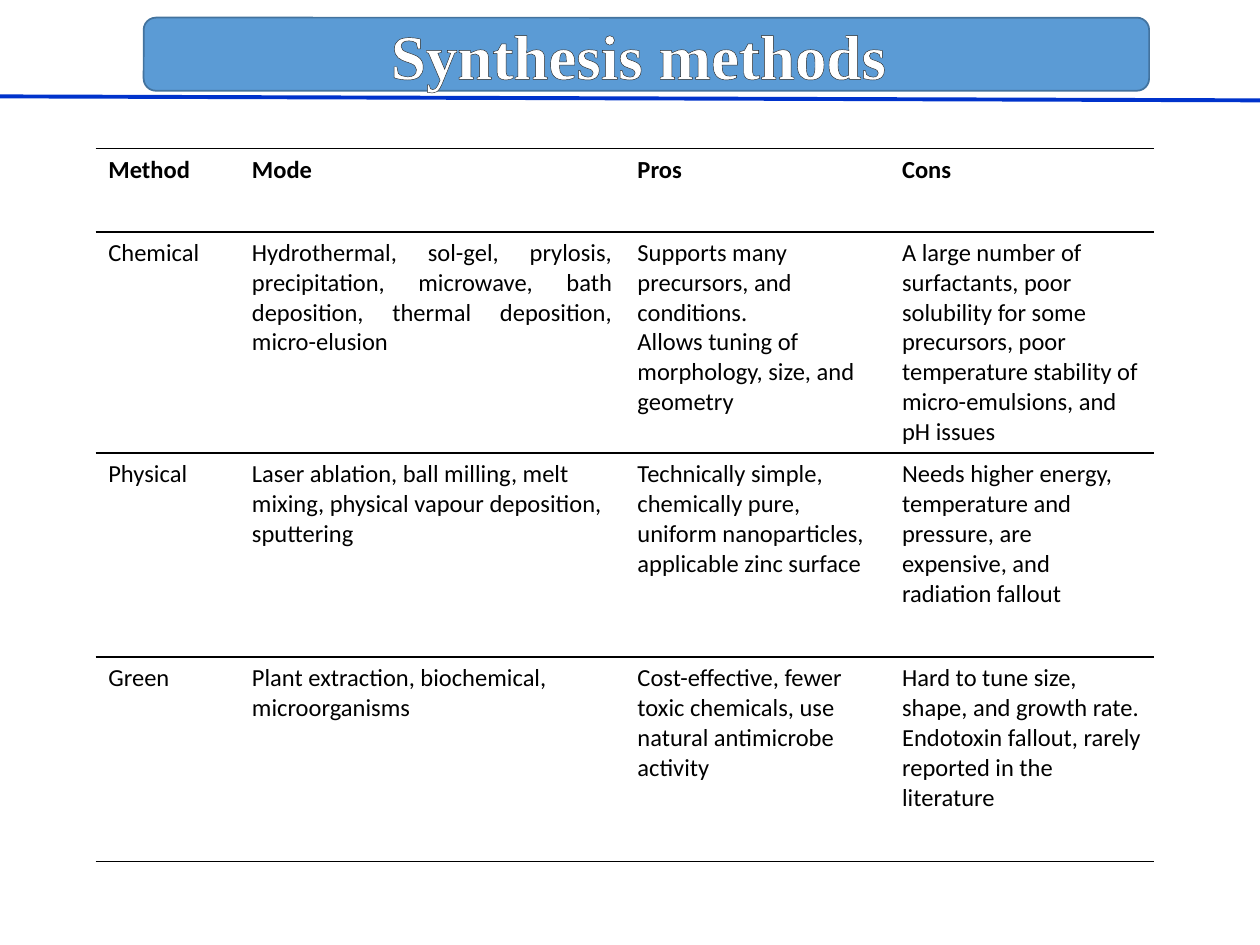
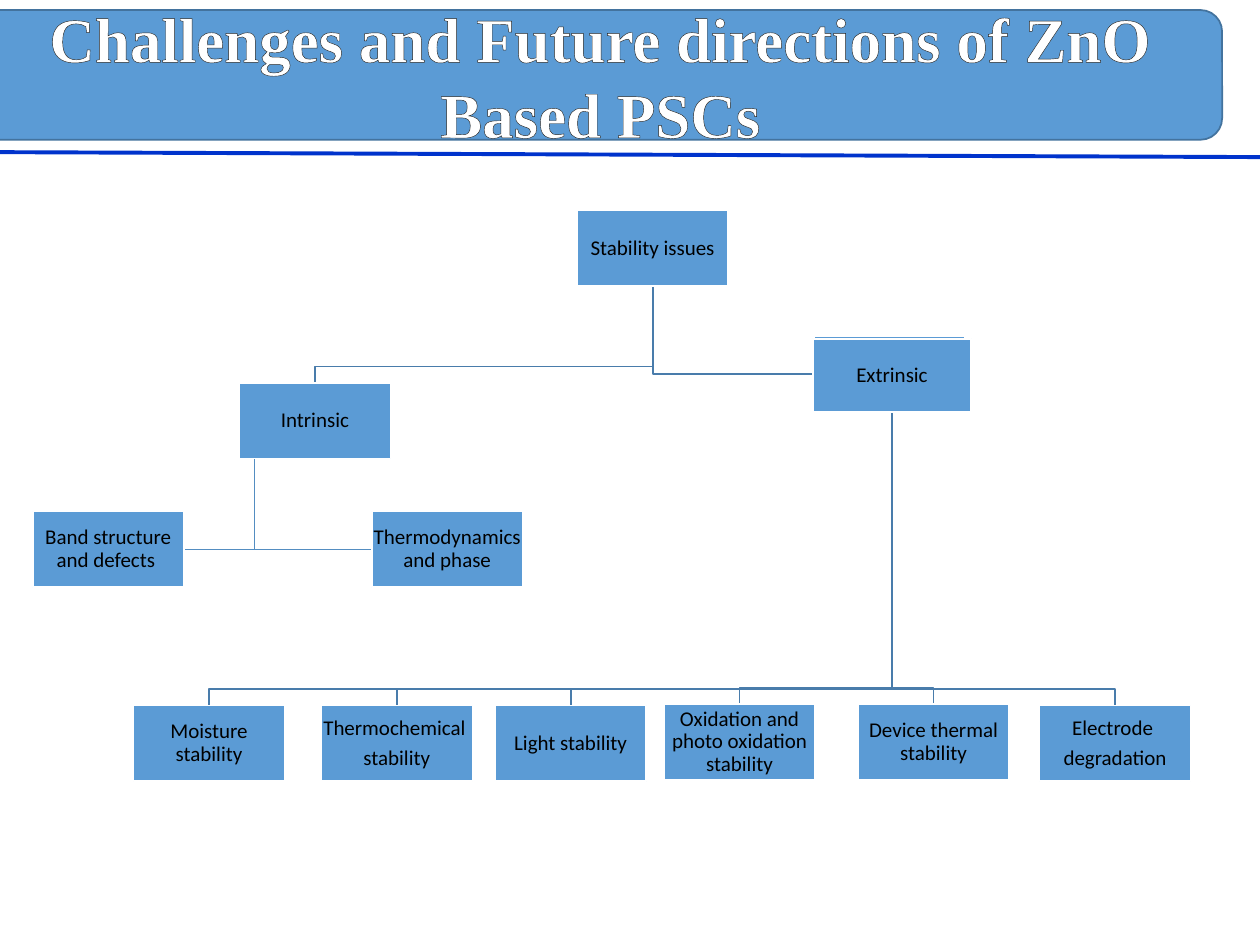
"""Two slides on ZnO solar cells: synthesis methods and stability challenges."""
from lxml import etree
from pptx import Presentation
from pptx.dml.color import RGBColor
from pptx.enum.shapes import MSO_CONNECTOR, MSO_SHAPE
from pptx.enum.text import MSO_ANCHOR, MSO_AUTO_SIZE, PP_ALIGN
from pptx.oxml import parse_xml
from pptx.oxml.ns import nsdecls, qn
from pptx.util import Inches, Pt

ROUNDED, RECTANGLE = MSO_SHAPE.ROUNDED_RECTANGLE, MSO_SHAPE.RECTANGLE
STRAIGHT = MSO_CONNECTOR.STRAIGHT
MIDDLE, NO_FIT = MSO_ANCHOR.MIDDLE, MSO_AUTO_SIZE.NONE
CENTER, LEFT, JUSTIFY = PP_ALIGN.CENTER, PP_ALIGN.LEFT, PP_ALIGN.JUSTIFY

COLORS = {
    "box": "5B9BD5", "band edge": "43739E", "rule": "0033CC",
    "elbow": "497CAB", "light elbow": "538DC1",
    "text": "000000", "white": "FFFFFF", "title edge": "262626",
}
TITLE_FONT = {"name": "Times New Roman", "size": Pt(36), "bold": True}
HEADER_FONT = {"name": "Calibri", "size": Pt(14), "bold": True}
CELL_FONT = {**HEADER_FONT, "bold": False}
BOX_FONT = {**CELL_FONT, "size": Pt(12)}
TITLE_FRAME = {"auto_size": NO_FIT, "vertical_anchor": MIDDLE, "word_wrap": True}
INSET = Inches(0.01)
BOX_FRAME = {
    "margin_left": INSET, "margin_right": INSET, "margin_top": INSET,
    "margin_bottom": INSET, "vertical_anchor": MIDDLE, "word_wrap": True,
}
BOX_PARA = {"alignment": CENTER, "line_spacing": 0.9, "space_after": Pt(4.2)}

TITLES = [
    {"text": "Synthesis methods ", "band": (1.14, 0.14, 7.98, 0.58),
     "rule": (-1.63, 0.76, 11.13, 0.8)},
    {"text": "Challenges and Future directions of ZnO Based PSCs",
     "band": (-0.17, 0.08, 9.87, 1.03), "rule": (-1.93, 1.2, 10.83, 1.25)},
]
METHODS = [
    ["Method", "Mode", "Pros", "Cons"],
    ["Chemical",
     "Hydrothermal, sol-gel, prylosis, precipitation, microwave, bath deposition, "
     "thermal deposition, micro-elusion",
     "Supports many precursors, and conditions.\n"
     "Allows tuning of morphology, size, and geometry",
     "A large number of surfactants, poor solubility for some precursors, "
     "poor temperature stability of micro-emulsions, and pH issues"],
    ["Physical",
     "Laser ablation, ball milling, melt mixing, physical vapour deposition, sputtering",
     "Technically simple, chemically pure, uniform nanoparticles, applicable zinc surface",
     "Needs higher energy, temperature and pressure, are expensive, and radiation fallout"],
    ["Green",
     "Plant extraction, biochemical, microorganisms",
     "Cost-effective, fewer toxic chemicals, use natural antimicrobe activity",
     "Hard to tune size, shape, and growth rate. Endotoxin fallout, "
     "rarely reported in the literature"],
]
COLUMN_WIDTHS = [1.14, 3.06, 2.1, 2.1]
ROW_HEIGHTS = [0.66, 1.66, 1.62, 1.62]

BOX_WIDTH, BOX_HEIGHT = 1.2, 0.6
EXTRINSIC_LEAVES = [
    (1.06, 5.6, "Moisture stability"),
    (2.55, 5.6, "Thermochemical \nstability"),
    (3.93, 5.6, "Light stability"),
    (5.27, 5.59, "Oxidation and photo oxidation stability"),
    (6.81, 5.59, "Device thermal stability"),
    (8.25, 5.6, "Electrode \ndegradation"),
]
UPPER_BOXES = [
    (4.58, 1.67, "Stability issues"),
    (1.9, 3.04, "Intrinsic"),
    (2.95, 4.06, "Thermodynamics and phase"),
    (0.26, 4.06, "Band structure and defects "),
    (6.46, 2.67, ""),
]
BOXES = [(left, top, BOX_WIDTH, BOX_HEIGHT, label)
         for left, top, label in UPPER_BOXES + EXTRINSIC_LEAVES]
BOXES.append((6.45, 2.69, 1.26, 0.58, "Extrinsic"))


def apply(target, settings):
    for name, value in settings.items():
        setattr(target, name, value)


def paint(shape, fill, line, width):
    shape.shadow.inherit = False
    if fill:
        shape.fill.solid()
        shape.fill.fore_color.rgb = RGBColor.from_string(COLORS[fill])
    else:
        shape.fill.background()
    shape.line.color.rgb = RGBColor.from_string(COLORS[line])
    shape.line.width = Pt(width)


deck = Presentation()
deck.slide_width, deck.slide_height = Inches(10), Inches(7.5)

pages = []
for heading in TITLES:
    page = deck.slides.add_slide(deck.slide_layouts[5])
    pages.append(page)
    rule = page.shapes.add_connector(STRAIGHT, *map(Inches, heading["rule"]))
    rule.line.color.rgb = RGBColor.from_string(COLORS["rule"])
    rule.line.width = Pt(2.25)
    etree.SubElement(rule._element.spPr, qn("a:effectLst"))

    place = [Inches(length) for length in heading["band"]]
    band = page.shapes.add_shape(ROUNDED, *place)
    paint(band, "box", "band edge", 1)
    title = page.shapes.title
    apply(title, dict(zip(("left", "top", "width", "height"), place)))
    title._element.addprevious(band._element)
    apply(title.text_frame, TITLE_FRAME)
    para = title.text_frame.paragraphs[0]
    para.alignment = CENTER
    span = para.add_run()
    span.text = heading["text"]
    apply(span.font, TITLE_FONT)
    span.font.color.rgb = RGBColor.from_string(COLORS["white"])
    span.font._element.insert(0, parse_xml(
        f'<a:ln {nsdecls("a")} w="9525"><a:solidFill>'
        f'<a:srgbClr val="{COLORS["title edge"]}"/></a:solidFill></a:ln>'))

methods_page, challenges_page = pages

frame = methods_page.shapes.add_table(
    len(METHODS), len(COLUMN_WIDTHS), Inches(0.76), Inches(1.18),
    Inches(sum(COLUMN_WIDTHS)), Inches(sum(ROW_HEIGHTS)))
table = frame.table
apply(table, {"first_row": False, "horz_banding": False})
for column, width in zip(table.columns, COLUMN_WIDTHS):
    column.width = Inches(width)
for row, height in zip(table.rows, ROW_HEIGHTS):
    row.height = Inches(height)

black_line = f'<a:solidFill><a:srgbClr val="{COLORS["text"]}"/></a:solidFill>'
for row_index, texts in enumerate(METHODS):
    for column_index, text in enumerate(texts):
        cell = table.cell(row_index, column_index)
        cell.text = text
        for para in cell.text_frame.paragraphs:
            para.alignment = JUSTIFY if (row_index, column_index) == (1, 1) else LEFT
            for span in para.runs:
                apply(span.font, CELL_FONT if row_index else HEADER_FONT)
                span.font.color.rgb = RGBColor.from_string(COLORS["text"])
        properties = cell._tc.get_or_add_tcPr()
        for side in "LRTB":
            border = black_line if side in "TB" else "<a:noFill/>"
            properties.append(parse_xml(
                f'<a:ln{side} {nsdecls("a")} w="12700">{border}</a:ln{side}>'))
        cell.fill.background()

elbows = [
    ("elbow", [(7.08, 3.28), (7.08, top - 0.13),
               (left + BOX_WIDTH / 2, top - 0.13), (left + BOX_WIDTH / 2, top)])
    for left, top, label in EXTRINSIC_LEAVES
]
elbows += [
    ("elbow", [(5.18, 2.27), (5.18, 2.97), (6.46, 2.97)]),
    ("light elbow", [(2.02, 3.64), (2.02, 4.36), (1.46, 4.36)]),
    ("light elbow", [(2.02, 3.64), (2.02, 4.36), (2.95, 4.36)]),
    ("elbow", [(5.18, 2.27), (5.18, 2.91), (2.5, 2.91), (2.5, 3.04)]),
]
for color, points in elbows:
    start, *corners = [(Inches(x), Inches(y)) for x, y in points]
    builder = challenges_page.shapes.build_freeform(*start)
    builder.add_line_segments(corners, close=False)
    paint(builder.convert_to_shape(), None, color, 1)

for *place, label in BOXES:
    box = challenges_page.shapes.add_shape(RECTANGLE, *map(Inches, place))
    paint(box, "box", "white", 1)
    apply(box.text_frame, BOX_FRAME)
    box.text_frame.text = label
    for para in box.text_frame.paragraphs:
        apply(para, BOX_PARA)
        for span in para.runs:
            apply(span.font, BOX_FONT)
            span.font.color.rgb = RGBColor.from_string(COLORS["text"])

deck.save("out.pptx")
